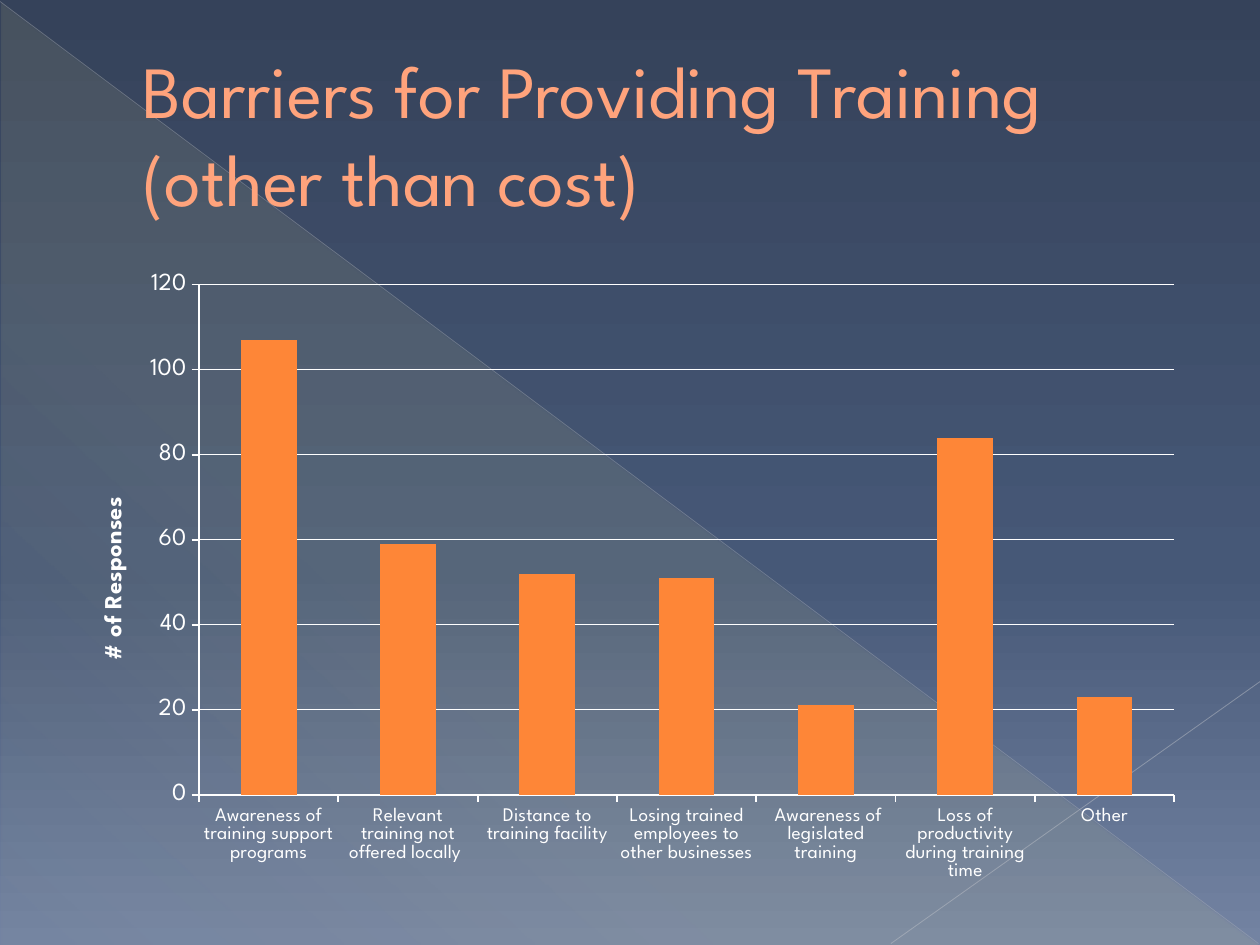
from lxml.etree import SubElement
from pptx import Presentation
from pptx.chart.data import CategoryChartData
from pptx.dml.color import RGBColor
from pptx.enum.chart import XL_CHART_TYPE as ChartType, XL_TICK_MARK as Tick
from pptx.enum.shapes import MSO_CONNECTOR as Connector, MSO_SHAPE as Shape
from pptx.enum.text import MSO_ANCHOR as Anchor, PP_ALIGN as Align
from pptx.oxml import parse_xml
from pptx.oxml.ns import nsdecls, qn
from pptx.util import Cm, Pt

# Content
HEADING = "Barriers for Providing Training (other than cost)"
VALUE_TITLE = "# of Responses"
RESPONSES = [
    ("Awareness of training support programs", 107),
    ("Relevant training not offered locally ", 59),
    ("Distance to training facility", 52),
    ("Losing trained employees to other businesses", 51),
    (" Awareness of legislated training", 21),
    ("Loss of productivity during training time", 84),
    ("Other", 23),
]

# Look: gradient stops are (position %, colour, opacity %)
FONT = "League Spartan"
WHITE, ORANGE, PEACH = "FFFFFF", "FE8637", "FFA37C"
SKY = [(0, "35425A", 100), (60, "465877", 100), (100, "7383A2", 100)]
GLOW = [(0, "FFF39D", 10), (70, "FFF39D", 8), (100, "FFF39D", 1)]
# Start x, y, end x, y in cm, colour, width in pt, opacity %
RAYS = [
    (0, 0.03, 25.37, 19.02, "BABDC4", 0.39, 35),
    (25.4, 13.74, 17.96, 19.02, "C1C4CA", 0.47, 45),
]


def rgb(code):
    return RGBColor.from_string(code)


def set_font(font, size, color=WHITE, bold=None):
    font.name, font.size, font.bold = FONT, Pt(size), bold
    font.color.rgb = rgb(color)


def set_line(line, width, color=WHITE):
    line.color.rgb = rgb(color)
    line.width = Pt(width)


def set_opacity(color_element, percent):
    SubElement(color_element, qn("a:alpha")).set("val", str(percent * 1000))


def set_gradient(fill, owner, stops, clockwise):
    fill.gradient()
    fill.gradient_angle = 360 - clockwise
    stop_list = owner.find(".//" + qn("a:gsLst"))
    for old in list(stop_list):
        stop_list.remove(old)
    for position, code, opacity in stops:
        stop = SubElement(stop_list, qn("a:gs"), pos=str(position * 1000))
        set_opacity(SubElement(stop, qn("a:srgbClr"), val=code), opacity)


def manual_layout(**settings):
    parts = "".join(f'<c:{key} val="{value}"/>' for key, value in settings.items())
    return parse_xml(f'<c:layout {nsdecls("c")}><c:manualLayout>{parts}'
                     '</c:manualLayout></c:layout>')


def place(element, layout, after=None):
    for old in element.findall(qn("c:layout")):
        element.remove(old)
    previous = element.find(qn(after)) if after else None
    element.insert(0 if previous is None else element.index(previous) + 1, layout)


prs = Presentation()
prs.slide_width, prs.slide_height = Cm(25.4), Cm(19.05)
slide = prs.slides.add_slide(prs.slide_layouts[5])
shapes = slide.shapes

# Background, corner glow and rays
set_gradient(slide.background.fill, slide.element, SKY, 90)
glow = shapes.add_shape(Shape.RIGHT_TRIANGLE, Cm(0.03), Cm(0.05), Cm(25.35), Cm(19))
glow.shadow.inherit = False
glow.line.fill.background()
set_gradient(glow.fill, glow.element, GLOW, 133)

for x1, y1, x2, y2, color, width, opacity in RAYS:
    ray = shapes.add_connector(Connector.STRAIGHT, Cm(x1), Cm(y1), Cm(x2), Cm(y2))
    set_line(ray.line, width, color)
    set_opacity(ray.element.find(".//" + qn("a:srgbClr")), opacity)
    SubElement(ray.element.spPr, qn("a:effectLst"))

# Title, brought in front of the glow
title = shapes.title
title.left, title.top, title.width, title.height = Cm(1.27), Cm(0.74), Cm(22.86), Cm(3.89)
title.text_frame.text = HEADING
title.text_frame.word_wrap = True
title.text_frame.vertical_anchor = Anchor.MIDDLE
heading = title.text_frame.paragraphs[0]
heading.alignment = Align.LEFT
set_font(heading.font, 42, PEACH)
indent = heading._p.get_or_add_pPr()
indent.set("marL", str(Cm(1.35)))
indent.set("indent", "0")
title.element.getparent().append(title.element)

# Chart
responses = CategoryChartData()
responses.categories = [barrier for barrier, _ in RESPONSES]
responses.add_series("Series 1", [count for _, count in RESPONSES])
chart = shapes.add_chart(ChartType.COLUMN_CLUSTERED, Cm(1.27), Cm(5.23),
                         Cm(22.86), Cm(12.7), responses).chart
chart.has_legend = chart.has_title = False
set_font(chart.font, 14)

plot = chart.plots[0]
plot.gap_width = 150
plot.vary_by_categories = False
bars = plot.series[0].format.fill
bars.solid()
bars.fore_color.rgb = rgb(ORANGE)

# Axes
barriers, counts = chart.category_axis, chart.value_axis
for axis, size in ((barriers, 11), (counts, 14)):
    axis.major_tick_mark = Tick.OUTSIDE
    axis.minor_tick_mark = Tick.NONE
    set_font(axis.tick_labels.font, size)
    set_line(axis.format.line, 1)
counts.minimum_scale, counts.maximum_scale, counts.major_unit = 0, 120, 20
counts.has_major_gridlines = True
set_line(counts.major_gridlines.format.line, 0.75)
value_title = counts.axis_title
value_title.text_frame.text = VALUE_TITLE
set_font(value_title.text_frame.paragraphs[0].font, 14, bold=True)
turn = value_title.text_frame._txBody.find(qn("a:bodyPr"))
turn.set("rot", "-5400000")
turn.set("vert", "horz")

# Plot and axis title positions, as shares of the chart
place(chart._chartSpace.find(".//" + qn("c:plotArea")),
      manual_layout(layoutTarget="inner", xMode="edge", yMode="edge",
                    x=0.12, y=0.04, w=0.86, h=0.81))
place(value_title._element,
      manual_layout(xMode="edge", yMode="edge", x=0.03, y=0.37), after="c:tx")

prs.save("out.pptx")
